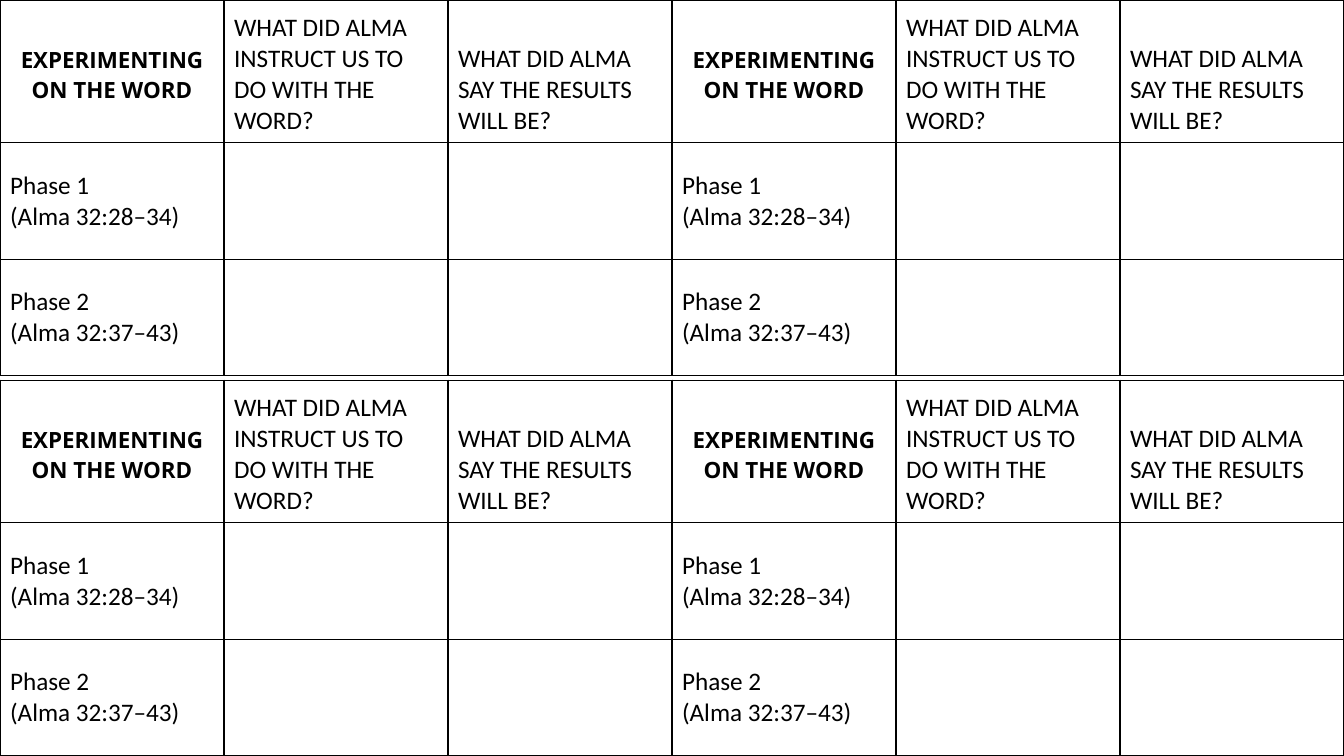
import itertools
from dataclasses import dataclass

import pptx
import pptx.dml.color
import pptx.enum.text
import pptx.oxml
import pptx.oxml.ns
import pptx.slide
import pptx.table
import pptx.util

Pt = pptx.util.Pt
Anchor = pptx.enum.text.MSO_ANCHOR
Align = pptx.enum.text.PP_ALIGN

COLORS = {"ink": "000000", "paper": "FFFFFF"}
SLIDE_WIDTH, SLIDE_HEIGHT = 960, 540
COLUMN_WIDTH = 160
ROW_HEIGHTS = (102, 83.25, 83.25)
WORKSHEET_WIDTH = 3 * COLUMN_WIDTH
WORKSHEET_HEIGHT = sum(ROW_HEIGHTS)
BORDER_WIDTH = 1


@dataclass(frozen=True)
class Entry:
    text: str = ""
    font: str = "Calibri"
    size: float = 18
    bold: bool = False
    align: Align = Align.LEFT
    anchor: Anchor = Anchor.MIDDLE
    bottom_margin: float = 5


WORKSHEET = (
    (
        Entry("EXPERIMENTING ON THE WORD", "Open Sans", 16, True,
              Align.CENTER, Anchor.BOTTOM, 27),
        Entry("WHAT DID ALMA INSTRUCT US TO DO WITH THE WORD?", anchor=Anchor.BOTTOM),
        Entry("WHAT DID ALMA SAY THE RESULTS WILL BE?", anchor=Anchor.BOTTOM),
    ),
    (Entry("Phase 1\n(Alma 32:28–34)"), Entry(), Entry()),
    (Entry("Phase 2\n(Alma 32:37–43)"), Entry(), Entry()),
)


def rgb(name: str) -> pptx.dml.color.RGBColor:
    return pptx.dml.color.RGBColor.from_string(COLORS[name])


def add_borders(cell: pptx.table._Cell) -> None:
    """Rule all four sides; the lines must precede the fill in the cell XML."""
    properties = cell._tc.get_or_add_tcPr()
    for position, side in enumerate(("lnL", "lnR", "lnT", "lnB")):
        border = pptx.oxml.parse_xml(
            f'<a:{side} {pptx.oxml.ns.nsdecls("a")} w="{Pt(BORDER_WIDTH)}">'
            f'<a:solidFill><a:srgbClr val="{COLORS["ink"]}"/></a:solidFill>'
            f"</a:{side}>"
        )
        properties.insert(position, border)


def fill_cell(cell: pptx.table._Cell, entry: Entry) -> None:
    cell.fill.solid()
    cell.fill.fore_color.rgb = rgb("paper")
    cell.vertical_anchor = entry.anchor
    cell.margin_left = cell.margin_right = Pt(7.2)
    cell.margin_top, cell.margin_bottom = Pt(5), Pt(entry.bottom_margin)
    cell.text = entry.text
    for paragraph in cell.text_frame.paragraphs:
        paragraph.alignment = entry.align
        paragraph.font.name = entry.font
        paragraph.font.size = Pt(entry.size)
        paragraph.font.bold = entry.bold
        paragraph.font.color.rgb = rgb("ink")
    add_borders(cell)


def add_worksheet(slide: pptx.slide.Slide, left: float, top: float) -> None:
    table = slide.shapes.add_table(
        len(WORKSHEET), len(WORKSHEET[0]),
        Pt(left), Pt(top), Pt(WORKSHEET_WIDTH), Pt(WORKSHEET_HEIGHT),
    ).table
    table.first_row = table.horz_banding = False
    for column in table.columns:
        column.width = Pt(COLUMN_WIDTH)
    for row, height in zip(table.rows, ROW_HEIGHTS):
        row.height = Pt(height)
    for cell, entry in zip(table.iter_cells(), itertools.chain(*WORKSHEET)):
        fill_cell(cell, entry)


def main() -> None:
    deck = pptx.Presentation()
    deck.slide_width, deck.slide_height = Pt(SLIDE_WIDTH), Pt(SLIDE_HEIGHT)
    slide = deck.slides.add_slide(deck.slide_layouts[6])
    tops = (0, SLIDE_HEIGHT - WORKSHEET_HEIGHT)
    lefts = (0, SLIDE_WIDTH - WORKSHEET_WIDTH)
    for top, left in itertools.product(tops, lefts):
        add_worksheet(slide, left, top)
    deck.save("out.pptx")


if __name__ == "__main__":
    main()
